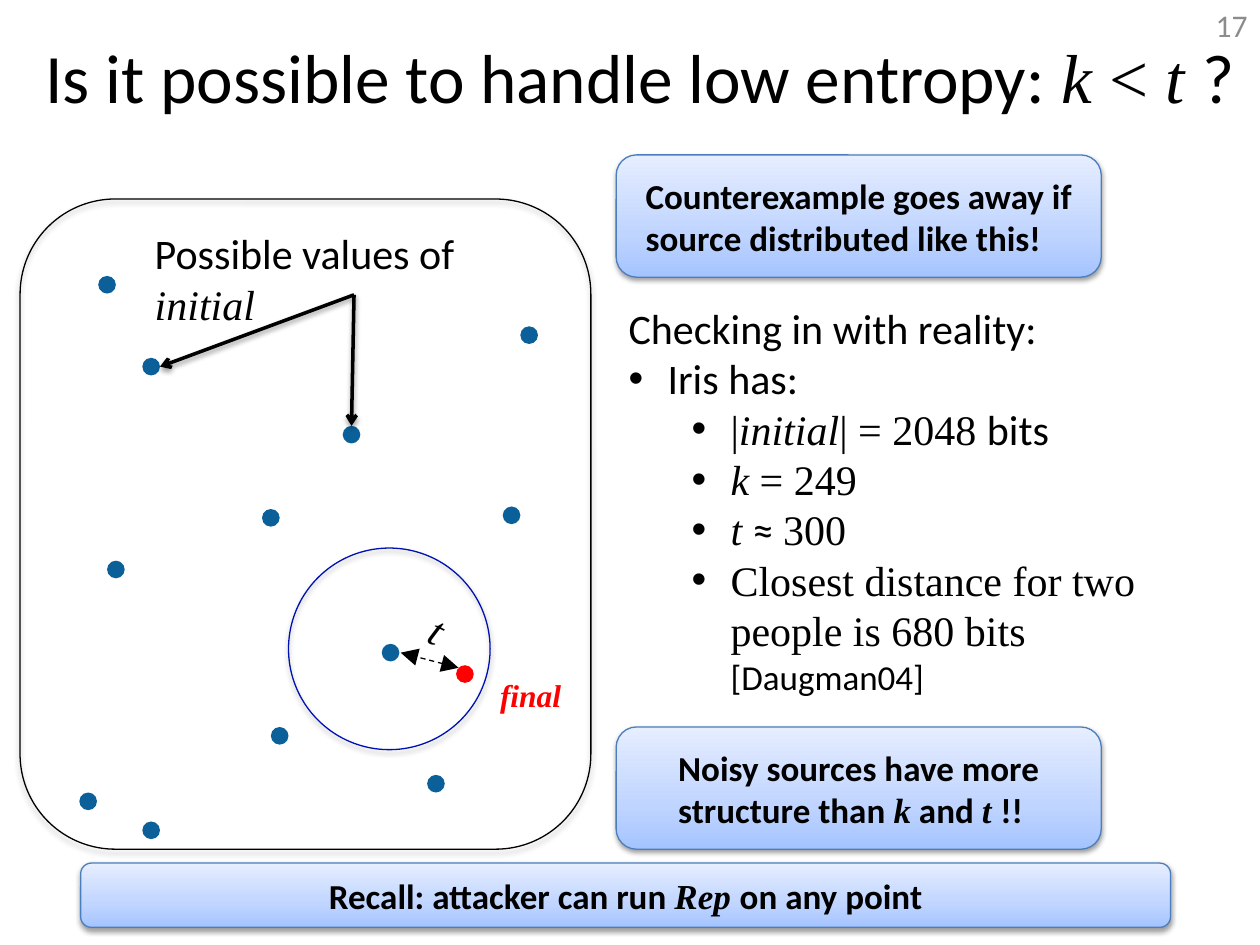
from lxml import etree
from pptx import Presentation
from pptx.dml.color import RGBColor
from pptx.enum.dml import MSO_LINE
from pptx.enum.shapes import MSO_CONNECTOR, MSO_SHAPE
from pptx.enum.text import MSO_ANCHOR, MSO_AUTO_SIZE, PP_ALIGN
from pptx.oxml import parse_xml
from pptx.oxml.ns import nsdecls, qn
from pptx.util import Inches, Pt

COLORS = {
    "black": "000000", "dot": "0B609A", "final": "FF0000", "ball": "0011B2",
    "number": "8C8C8C", "callout": "4B7EBC",
}
CALLOUT_STOPS = [(0, "A4C4FF"), (35, "BFD4FF"), (100, "E6EEFF")]
SANS, SERIF = "Calibri", "Times New Roman"

DOT_SIZE = 0.14
POSSIBLE_VALUES = [
    (2.15, 5.77), (1.13, 2.84), (1.13, 6.52), (3.39, 6.15), (4.13, 2.59), (2.72, 3.38),
    (3.99, 4.02), (0.85, 4.45), (0.63, 6.29), (3.03, 5.11), (0.78, 2.19), (2.08, 4.04),
]


def color(name):
    return RGBColor.from_string(COLORS[name])


def math(text, italic=True):
    """A span in the serif face used for symbols."""
    return text, SERIF, italic


def write(para, spans, size=24, ink="black", bold=False, align=None):
    """Fill a paragraph; a span is plain text or a (text, font, italic) tuple."""
    para.alignment = align
    for item in spans:
        text, font, italic = (item, SANS, False) if isinstance(item, str) else item
        span = para.add_run()
        span.text = text
        span.font.name, span.font.italic, span.font.bold = font, italic, bold
        span.font.size = Pt(size)
        span.font.color.rgb = color(ink)


def add_bullet(para, left, hang=0.31):
    props = para._p.get_or_add_pPr()
    props.set("marL", str(Inches(left)))
    props.set("indent", str(-Inches(hang)))
    etree.SubElement(props, qn("a:buFont")).set("typeface", "Arial")
    etree.SubElement(props, qn("a:buChar")).set("char", "•")


def add_text(page, at, spans, wrap=True, anchor=MSO_ANCHOR.TOP, **style):
    box = page.shapes.add_textbox(*map(Inches, at))
    frame = box.text_frame
    frame.word_wrap = wrap
    frame.vertical_anchor = anchor
    write(frame.paragraphs[0], spans, **style)
    return box


def add_shadow(shape, opacity, distance):
    effects = shape._element.spPr.find(qn("a:effectLst"))
    if effects is None:
        effects = etree.SubElement(shape._element.spPr, qn("a:effectLst"))
    effects.append(parse_xml(
        f'<a:outerShdw {nsdecls("a")} blurRad="{Pt(3.1)}" dist="{Pt(distance)}" '
        f'dir="5400000" rotWithShape="0"><a:srgbClr val="{COLORS["black"]}">'
        f'<a:alpha val="{opacity * 1000}"/></a:srgbClr></a:outerShdw>'))


def add_shape(page, kind, at, fill=None, line=None):
    shape = page.shapes.add_shape(kind, *map(Inches, at))
    shape.shadow.inherit = False
    if fill:
        shape.fill.solid()
        shape.fill.fore_color.rgb = color(fill)
    else:
        shape.fill.background()
    if line:
        shape.line.color.rgb = color(line)
        shape.line.width = Pt(0.75)
    else:
        shape.line.fill.background()
    return shape


def add_dot(page, left, top, fill="dot"):
    add_shape(page, MSO_SHAPE.OVAL, (left, top, DOT_SIZE, DOT_SIZE), fill=fill)


def add_outline(page, kind, at, line):
    add_shadow(add_shape(page, kind, at, line=line), 35, 1.8)


def add_callout(page, at, spans, align=None):
    box = add_shape(page, MSO_SHAPE.ROUNDED_RECTANGLE, at, line="callout")
    stops = "".join(f'<a:gs pos="{pos * 1000}"><a:srgbClr val="{value}"/></a:gs>'
                    for pos, value in CALLOUT_STOPS)
    props = box._element.spPr
    props.replace(props.find(qn("a:noFill")), parse_xml(
        f'<a:gradFill {nsdecls("a")} rotWithShape="1"><a:gsLst>{stops}</a:gsLst>'
        '<a:lin ang="16200000" scaled="0"/></a:gradFill>'))
    add_shadow(box, 38, 1.6)
    frame = box.text_frame
    frame.word_wrap = True
    frame.vertical_anchor = MSO_ANCHOR.MIDDLE
    frame.margin_left = frame.margin_right = Inches(0.05)
    # Centre the left-aligned text as a block
    frame._txBody.bodyPr.set("anchorCtr", "1")
    write(frame.paragraphs[0], spans, size=20, bold=True, align=align or PP_ALIGN.LEFT)


def add_arrow(page, start, end, width, ends, kind, size="med"):
    arrow = page.shapes.add_connector(MSO_CONNECTOR.STRAIGHT, *map(Inches, start + end))
    arrow.line.color.rgb = color("black")
    arrow.line.width = Pt(width)
    etree.SubElement(arrow._element.spPr, qn("a:effectLst"))
    for end_name in ends:
        tip = etree.SubElement(arrow.line._get_or_add_ln(), qn(f"a:{end_name}"))
        for key, value in (("type", kind), ("w", size), ("len", size)):
            tip.set(key, value)
    return arrow


def add_title(page):
    title = page.shapes.title
    title.left, title.top, title.width, title.height = map(Inches, (0.16, -0.02, 9.84, 1.25))
    frame = title.text_frame
    frame.auto_size = MSO_AUTO_SIZE.NONE
    frame.vertical_anchor = MSO_ANCHOR.MIDDLE
    write(frame.paragraphs[0],
          ["Is it possible to handle low entropy: ", math("k"), math(" < ", False),
           math("t "), "?"], size=39.6, align=PP_ALIGN.CENTER)


def add_source_diagram(page):
    for left, top in POSSIBLE_VALUES:
        add_dot(page, left, top)

    # Label pointing at two of the values
    for end in ((2.79, 3.38), (1.27, 2.91)):
        add_shadow(add_arrow(page, (2.81, 2.34), end, 2, ["tailEnd"], "arrow"), 38, 1.6)
    add_text(page, (1.13, 1.76, 3.17, 0.91), ["Possible values of ", math("initial")])

    # Final reading at distance t
    add_text(page, (3.87, 5.32, 0.78, 0.4), [math("final")], wrap=False,
             size=18, ink="final", bold=True)
    add_dot(page, 3.62, 5.28, fill="final")
    distance = add_arrow(page, (3.64, 5.3), (3.18, 5.18), 0.75, [], "triangle")
    distance.line.dash_style = MSO_LINE.DASH
    for end_name in ("headEnd", "tailEnd"):
        tip = etree.SubElement(distance.line._get_or_add_ln(), qn(f"a:{end_name}"))
        for key, value in (("type", "triangle"), ("w", "lg"), ("len", "lg")):
            tip.set(key, value)
    add_outline(page, MSO_SHAPE.OVAL, (2.29, 4.35, 1.6, 1.6), "ball")
    label = add_text(page, (3.25, 4.73, 0.4, 0.5), [math(" ", False), math("t")], wrap=False)
    label.rotation = 26.9

    # Frame of the whole space
    add_outline(page, MSO_SHAPE.ROUNDED_RECTANGLE, (0.16, 1.58, 4.53, 5.16), "black")


def add_reality_check(page):
    box = add_text(page, (4.89, 2.35, 5, 3.33), ["Checking in with reality:"])
    items = [
        (0, ["Iris has:"]),
        (1, [math("|", False), math("initial"), math("| = 2048 ", False), "bits"]),
        (1, [math("k "), math("= 249", False)]),
        (1, [math("t "), "≈ ", math("300", False)]),
        (1, [math("Closest distance for two people is 680 bits", False)]),
    ]
    for level, spans in items:
        para = box.text_frame.add_paragraph()
        para.level = level
        write(para, spans)
        add_bullet(para, 0.31 + 0.5 * level)
    # Citation under the last item
    para.add_line_break()
    write(para, ["[Daugman04]"], size=20)


def main():
    deck = Presentation()
    deck.slide_width, deck.slide_height = Inches(10), Inches(7.5)
    page = deck.slides.add_slide(deck.slide_layouts[5])

    add_title(page)
    add_text(page, (7.67, 0, 2.33, 0.4), ["17"], anchor=MSO_ANCHOR.MIDDLE,
             size=18, ink="number", align=PP_ALIGN.RIGHT)
    add_source_diagram(page)
    add_reality_check(page)

    # Callouts
    add_callout(page, (4.89, 1.23, 3.85, 0.97),
                ["Counterexample goes away if source distributed like this!"])
    add_callout(page, (4.89, 5.77, 3.85, 0.97),
                ["Noisy sources have more structure than ", math("k"), " and ",
                 math("t "), "!!"])
    add_callout(page, (0.64, 6.85, 8.65, 0.51),
                ["Recall: attacker can run ", math("Rep "), "on any point"],
                align=PP_ALIGN.CENTER)

    deck.save("out.pptx")


if __name__ == "__main__":
    main()
